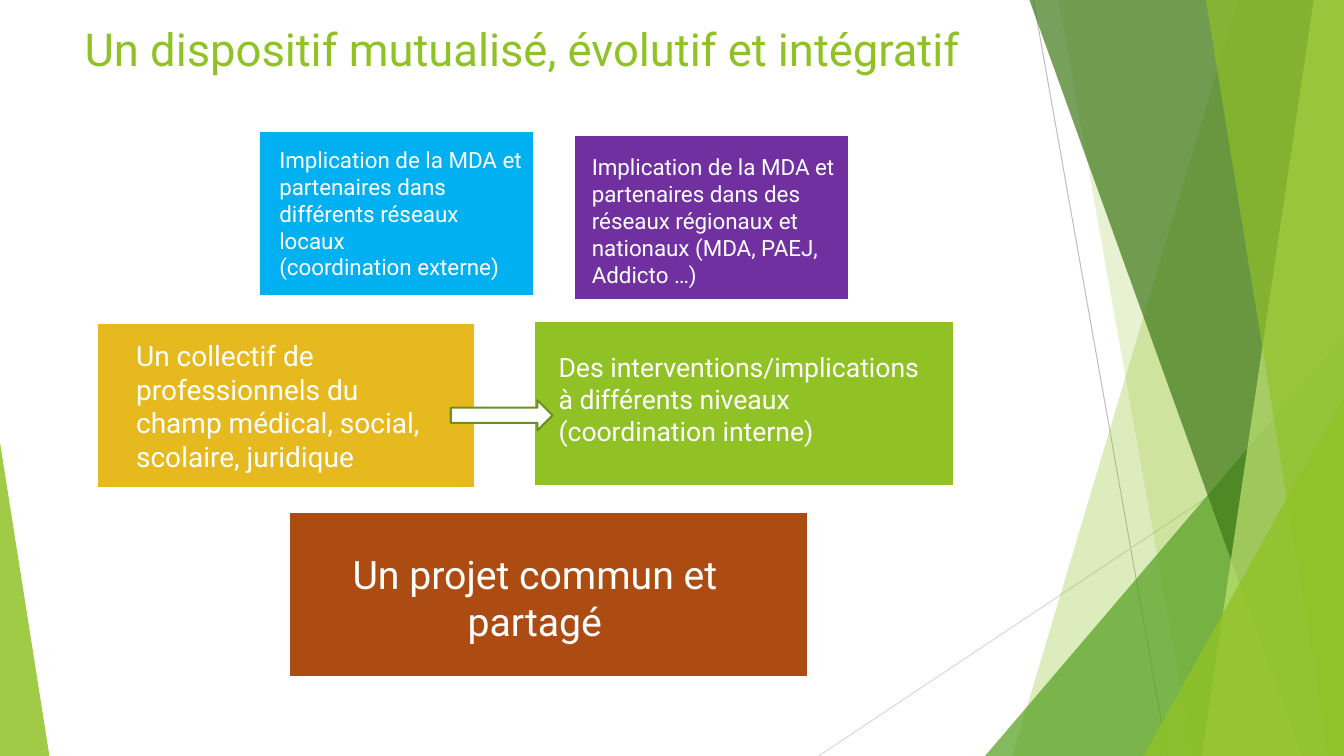
"""Build a slide on a shared, evolving and integrated support scheme."""
from lxml import etree
from pptx import Presentation
from pptx.dml.color import RGBColor
from pptx.enum.shapes import MSO_CONNECTOR, MSO_SHAPE
from pptx.enum.text import MSO_ANCHOR, PP_ALIGN
from pptx.oxml.ns import qn
from pptx.util import Inches, Pt

STRAIGHT = MSO_CONNECTOR.STRAIGHT
RECTANGLE, TRIANGLE, ARROW = MSO_SHAPE.RECTANGLE, MSO_SHAPE.ISOSCELES_TRIANGLE, MSO_SHAPE.RIGHT_ARROW
TOP, LEFT, CENTER = MSO_ANCHOR.TOP, PP_ALIGN.LEFT, PP_ALIGN.CENTER

WIDTH, HEIGHT = 13.33, 7.5
CARD_HEIGHT = 1.64
THEME = {
    "font": "Roboto", "white": "FFFFFF", "green": "90C226", "leaf": "54A021",
    "forest": "3F7819", "lime": "C0E474", "blue": "00B0F0", "purple": "7030A0",
    "gold": "E6B91E", "rust": "AD4C12", "arrow_line": "6B901C",
    "rule": "BFBFBF", "pale_rule": "D9D9D9",
    "title": 32.4, "project": 28, "team": 20, "actions": 19, "network": 16,
    "outline": 1.5, "hairline": 0.75,
}

TITLE = "Un dispositif mutualisé, évolutif et intégratif"
TITLE_BOX = (0.74, 0.16, 9.4, 0.99)
ARROW_BOX = (4.47, 3.97, 1.01, 0.3)

# fields: left, top, width, fill, size, alignment, insets (left, top, right), lines
CARDS = [
    (2.57, 1.3, 2.73, "blue", "network", LEFT, (0.2, 0.15, 0.09),
     ["Implication de la MDA et partenaires dans différents réseaux locaux",
      "(coordination externe)"]),
    (5.69, 1.34, 2.73, "purple", "network", LEFT, (0.18, 0.18, 0.04),
     ["Implication de la MDA et partenaires dans des réseaux régionaux et nationaux "
      "(MDA, PAEJ, Addicto …)"]),
    (0.96, 3.2, 3.75, "gold", "team", LEFT, (0.39, 0.16, 0.43),
     ["Un collectif de professionnels du champ médical, social, scolaire, juridique"]),
    (5.3, 3.18, 4.16, "green", "actions", LEFT, (0.24, 0.3, 0.17),
     ["Des interventions/implications", "à différents niveaux", "(coordination interne)"]),
    (2.87, 5.08, 5.14, "rust", "project", CENTER, (0.58, 0.38, 0.85),
     ["Un projet commun et partagé"]),
]

RULES = [(10.25, 0, 11.58, HEIGHT, "rule"), (WIDTH, 4.03, 8.12, HEIGHT, "pale_rule")]
FACETS = [
    ("band", (12.28, 10.04), "green", 30),
    ("band", (10.5, 11.83), "green", 20),
    ("triangle", (9.77, 3.33, 3.56, 1), "leaf", 72),
    ("band", (10.21, 12.91), "forest", 70),
    ("band", (13.03, 11.92), "lime", 70),
    ("band", (11.96, 13.18), "green", 65),
    ("triangle", (11.34, 3.93, 1.99, 1), "green", 80),
    ("triangle", (0, 4.39, 0.49, 0), "green", 85),
]


def color(name):
    return RGBColor.from_string(THEME[name])


def paint(shape, fill, line=None, opacity=100):
    shape.shadow.inherit = False
    shape.fill.solid()
    shape.fill.fore_color.rgb = color(fill)
    if opacity < 100:
        tint = shape.fill._xPr.find(".//" + qn("a:srgbClr"))
        etree.SubElement(tint, qn("a:alpha"), val=str(opacity * 1000))
    if line:
        shape.line.color.rgb = color(line)
        shape.line.width = Pt(THEME["outline"])
    else:
        shape.line.fill.background()


def write(box, lines, size, ink, alignment=LEFT):
    frame = box.text_frame
    frame.text = "\n".join(lines)
    frame.word_wrap = True
    frame.vertical_anchor = TOP
    for para in frame.paragraphs:
        para.alignment = alignment
        for span in para.runs:
            span.font.name = THEME["font"]
            span.font.size = Pt(THEME[size])
            span.font.color.rgb = color(ink)


def draw_rule(page, x1, y1, x2, y2, ink):
    rule = page.shapes.add_connector(STRAIGHT, *map(Inches, (x1, y1, x2, y2)))
    rule.line.color.rgb = color(ink)
    rule.line.width = Pt(THEME["hairline"])
    etree.SubElement(rule._element.spPr, qn("a:effectLst"))


def draw_facet(page, kind, geometry, fill, opacity):
    if kind == "band":
        top_x, bottom_x = geometry
        corners = [(top_x, 0), (WIDTH, 0), (WIDTH, HEIGHT), (bottom_x, HEIGHT)]
        points = [(Inches(x), Inches(y)) for x, y in corners]
        builder = page.shapes.build_freeform(*points[0])
        builder.add_line_segments(points[1:], close=True)
        facet = builder.convert_to_shape()
    else:
        left, top, width, apex = geometry
        facet = page.shapes.add_shape(TRIANGLE, *map(Inches, (left, top, width, HEIGHT - top)))
        facet.adjustments[0] = apex
    paint(facet, fill, opacity=opacity)


def draw_card(page, left, top, width, fill, size, alignment, insets, lines):
    card = page.shapes.add_shape(RECTANGLE, *map(Inches, (left, top, width, CARD_HEIGHT)))
    paint(card, fill, "white")
    frame = card.text_frame
    frame.margin_left, frame.margin_top, frame.margin_right = map(Inches, insets)
    write(card, lines, size, "white", alignment)


def main():
    deck = Presentation()
    deck.slide_width, deck.slide_height = Inches(WIDTH), Inches(HEIGHT)
    page = deck.slides.add_slide(deck.slide_layouts[6])
    for rule in RULES:
        draw_rule(page, *rule)
    for facet in FACETS:
        draw_facet(page, *facet)
    write(page.shapes.add_textbox(*map(Inches, TITLE_BOX)), [TITLE], "title", "green")
    for card in CARDS:
        draw_card(page, *card)
    paint(page.shapes.add_shape(ARROW, *map(Inches, ARROW_BOX)), "white", "arrow_line")
    deck.save("out.pptx")


if __name__ == "__main__":
    main()
